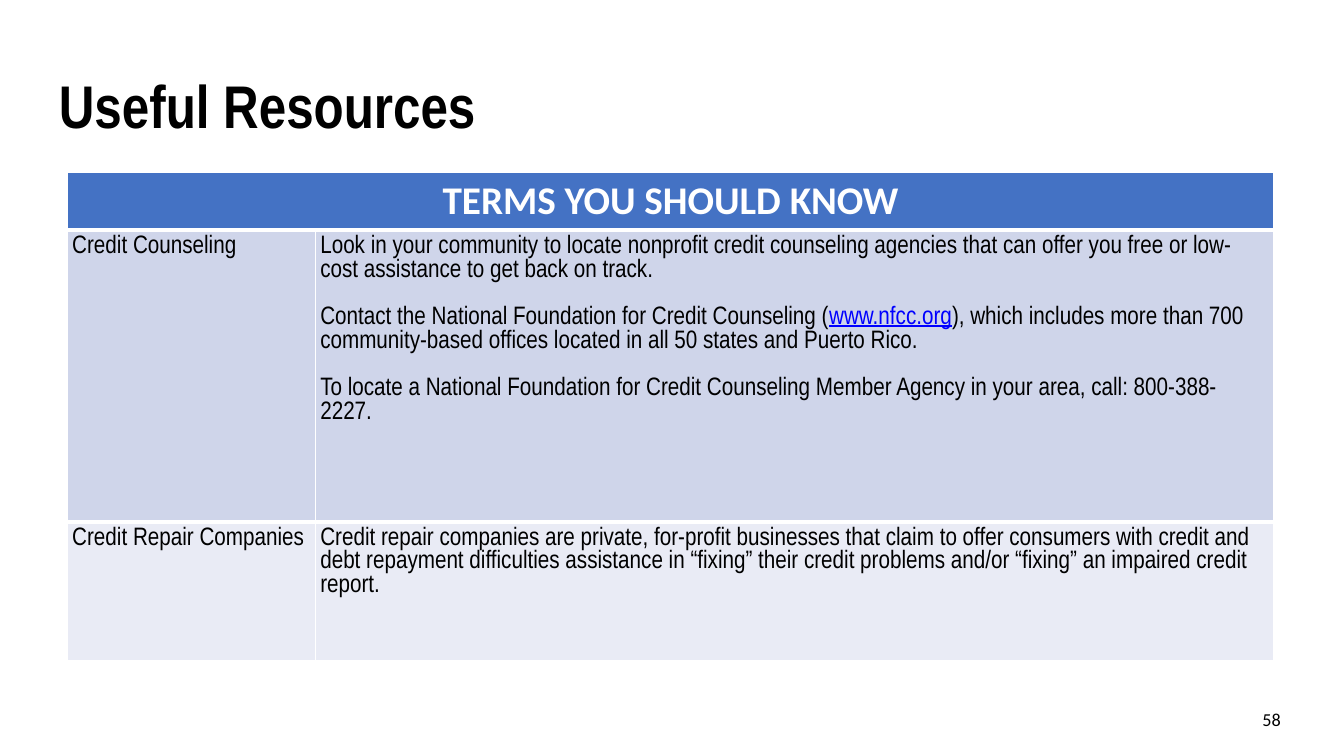
import pptx
import pptx.util
import pptx.dml.color
import pptx.enum.text
import pptx.oxml
import pptx.oxml.ns
import lxml.etree

Pt = pptx.util.Pt
ALIGN = pptx.enum.text.PP_ALIGN
ANCHOR = pptx.enum.text.MSO_ANCHOR
COLORS = {
    "text": "000000",
    "white": "FFFFFF",
    "header": "4472C4",
    "band_dark": "CFD5EA",
    "band_light": "E9EBF5",
    "web": "0000FF",
}
INSET = 3.6
LINE = 17
HEADING = "TERMS YOU SHOULD KNOW"
TERMS = [
    ("Credit Counseling", [
        ["Look in your community to locate nonprofit credit counseling agencies that can offer you free or low-cost assistance to get back on track."],
        ["Contact the National Foundation for Credit Counseling (",
         "www.nfcc.org",
         "), which includes more than 700 community-based offices located in all 50 states and Puerto Rico."],
        ["To locate a National Foundation for Credit Counseling Member Agency in your area, call: 800-388-2227."],
    ]),
    ("Credit Repair Companies", [
        ["Credit repair companies are private, for-profit businesses that claim to offer consumers with credit and debt repayment difficulties assistance in “fixing” their credit problems and/or “fixing” an impaired credit report."],
    ]),
]


def rgb(name):
    return pptx.dml.color.RGBColor.from_string(COLORS[name])


def add_run(p, text, size, font, color="text", bold=False):
    r = p.add_run()
    r.text = text
    r.font.size = Pt(size)
    r.font.name = font
    r.font.bold = bold
    r.font.color.rgb = rgb(color)
    return r


def set_insets(target):
    target.margin_left = target.margin_right = Pt(INSET)
    target.margin_top = target.margin_bottom = Pt(INSET)


def add_label(slide, box, text, size, font, align, bold=False):
    sp = slide.shapes.add_textbox(*[Pt(v) for v in box])
    tf = sp.text_frame
    set_insets(tf)
    tf.word_wrap = True
    tf.vertical_anchor = ANCHOR.MIDDLE
    p = tf.paragraphs[0]
    p.alignment = align
    add_run(p, text, size, font, bold=bold)
    return p


def add_title(slide, box):
    p = add_label(slide, box, "Useful Resources", 43, "Arial Narrow", ALIGN.LEFT, bold=True)
    p.line_spacing = 0.9


def style_cell(cell, fill, top, bottom):
    set_insets(cell)
    tcPr = cell._tc.get_or_add_tcPr()
    for side, width in (("L", 1), ("R", 1), ("T", top), ("B", bottom)):
        ln = lxml.etree.SubElement(tcPr, pptx.oxml.ns.qn("a:ln" + side), w=str(Pt(width)))
        solid = lxml.etree.SubElement(ln, pptx.oxml.ns.qn("a:solidFill"))
        lxml.etree.SubElement(solid, pptx.oxml.ns.qn("a:srgbClr"), val=COLORS["white"])
    cell.fill.solid()
    cell.fill.fore_color.rgb = rgb(fill)


def fill_cell(cell, paragraphs):
    tf = cell.text_frame
    for i, parts in enumerate(paragraphs):
        p = tf.add_paragraph() if i else tf.paragraphs[0]
        if i:
            p.space_before = Pt(LINE)
        for part in parts:
            web = part.startswith("www.")
            r = add_run(p, part, 18, "Arial Narrow", "web" if web else "text")
            if web:
                r.font.underline = True


def add_terms_table(slide, box, cols, rows):
    table = slide.shapes.add_table(len(rows), len(cols), *[Pt(v) for v in box]).table
    table.horz_banding = False
    for col, width in zip(table.columns, cols):
        col.width = Pt(width)
    for row, height in zip(table.rows, rows):
        row.height = Pt(height)
    borders = [("header", 1, 3), ("band_dark", 3, 3), ("band_light", 3, 1)]
    for row, style in zip(table.rows, borders):
        for cell in row.cells:
            style_cell(cell, *style)
    heading = table.cell(0, 0)
    heading.merge(table.cell(0, 1))
    p = heading.text_frame.paragraphs[0]
    p.alignment = ALIGN.CENTER
    add_run(p, HEADING, 28, "Calibri", "white", bold=True)
    for i, (term, paragraphs) in enumerate(TERMS, start=1):
        fill_cell(table.cell(i, 0), [[term]])
        fill_cell(table.cell(i, 1), paragraphs)


def add_page_number(slide, box):
    add_label(slide, box, "58", 13, "Calibri", ALIGN.RIGHT)


def main():
    prs = pptx.Presentation()
    prs.slide_width, prs.slide_height = Pt(960), Pt(540)
    slide = prs.slides.add_slide(prs.slide_layouts[6])
    add_title(slide, (38.5, 49, 878, 58))
    add_terms_table(slide, (48, 123.3, 861.9, 348.9), (177.2, 684.7), (41, 208.5, 99.4))
    add_page_number(slide, (888.5, 502.5, 30, 22.5))
    prs.save("out.pptx")


if __name__ == "__main__":
    main()
